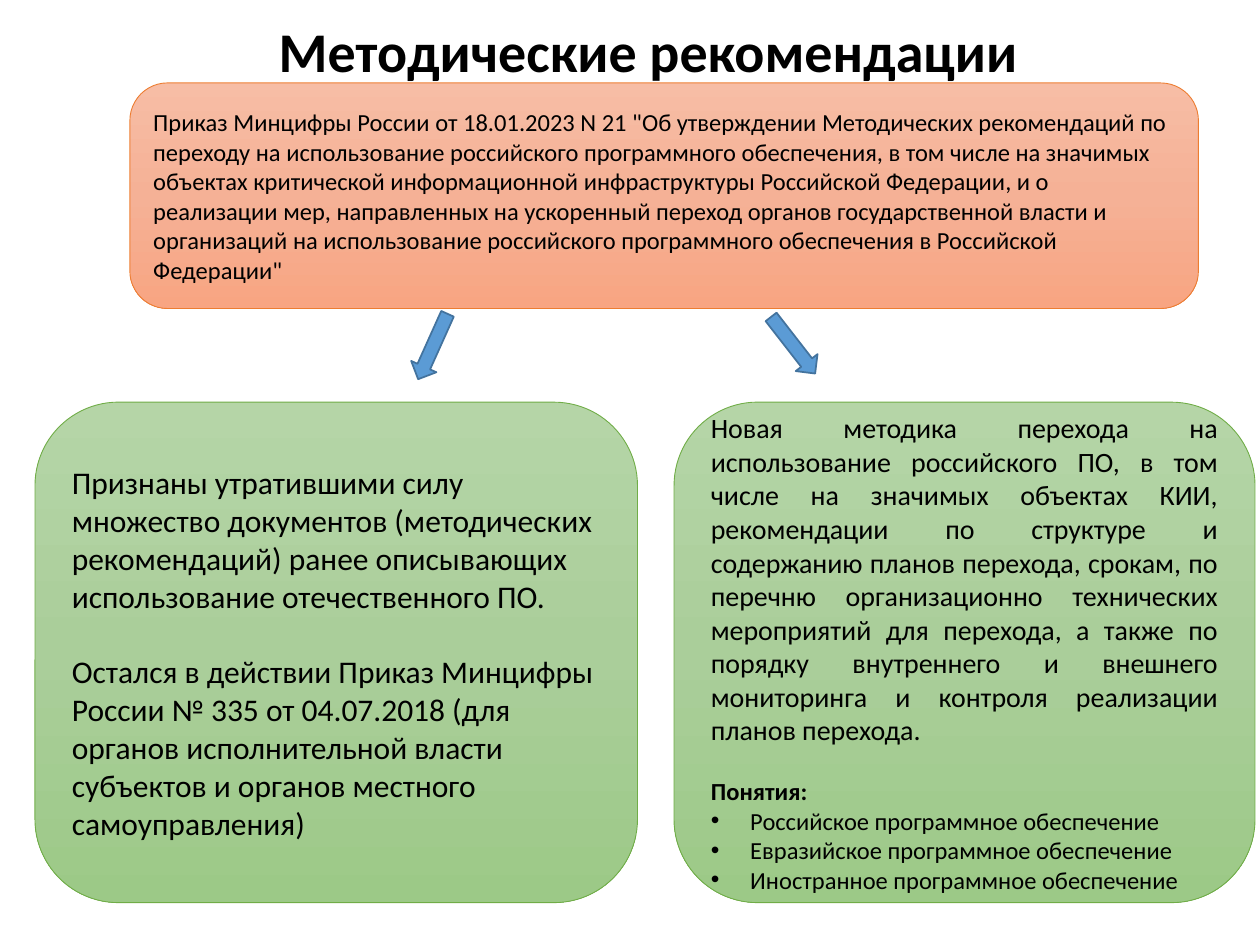
from copy import deepcopy
from dataclasses import dataclass

from lxml import etree
from pptx import Presentation, util as u
from pptx.dml.color import RGBColor
from pptx.enum import shapes, text
from pptx.oxml.ns import qn

COLORS = {
    "text": "000000",
    "arrow": "5B9BD5",
    "arrow_edge": "43739E",
    "orange_edge": "ED7D31",
    "orange_top": "F7BDA5",
    "orange_middle": "F5B196",
    "orange_bottom": "F8A582",
    "green_edge": "70AD47",
    "green_top": "B5D5A7",
    "green_middle": "AACE9A",
    "green_bottom": "9CC987",
}
FONT = "Calibri"
BULLET_INDENT = u.Pt(22.5)


@dataclass
class Line:
    wording: str
    size: float
    bold: bool = False
    bullet: bool = False
    gap: float = 0
    align: text.PP_ALIGN = text.PP_ALIGN.LEFT


@dataclass
class Panel:
    left: float
    top: float
    width: float
    height: float
    tone: str
    lines: list[Line]


@dataclass
class Arrow:
    left: float
    top: float
    angle: float
    width: float = 41
    height: float = 15.8


def rgb(name: str) -> RGBColor:
    return RGBColor.from_string(COLORS[name])


def format_line(paragraph, line: Line) -> None:
    paragraph.text = line.wording
    paragraph.alignment = line.align
    if line.gap:
        paragraph.space_before = u.Pt(line.gap)
    if line.bullet:
        properties = paragraph._p.get_or_add_pPr()
        properties.set("marL", str(BULLET_INDENT))
        properties.set("indent", str(-BULLET_INDENT))
        etree.SubElement(properties, qn("a:buFont"), typeface="Arial")
        etree.SubElement(properties, qn("a:buChar"), char="•")
    for run in paragraph.runs:
        run.font.name = FONT
        run.font.size = u.Pt(line.size)
        run.font.bold = line.bold
        run.font.color.rgb = rgb("text")


def fill_gradient(shape, tone: str) -> None:
    shape.fill.gradient()
    shape.fill.gradient_angle = 270
    stop_list = shape._element.spPr.find(".//" + qn("a:gsLst"))
    stop_list.insert(1, deepcopy(stop_list[0]))
    levels = ("top", 0), ("middle", 0.5), ("bottom", 1)
    for stop, (level, position) in zip(shape.fill.gradient_stops, levels):
        stop.color.rgb = rgb(f"{tone}_{level}")
        stop.position = position


def draw_panel(slide, panel: Panel) -> None:
    box = slide.shapes.add_shape(
        shapes.MSO_SHAPE.ROUNDED_RECTANGLE,
        u.Pt(panel.left), u.Pt(panel.top), u.Pt(panel.width), u.Pt(panel.height))
    box.shadow.inherit = False
    fill_gradient(box, panel.tone)
    box.line.color.rgb = rgb(f"{panel.tone}_edge")
    box.line.width = u.Pt(0.5)
    frame = box.text_frame
    frame.word_wrap = True
    frame.vertical_anchor = text.MSO_ANCHOR.MIDDLE
    frame.text = "\n".join(line.wording for line in panel.lines)
    for paragraph, line in zip(frame.paragraphs, panel.lines):
        format_line(paragraph, line)


def draw_arrow(slide, arrow: Arrow) -> None:
    pointer = slide.shapes.add_shape(
        shapes.MSO_SHAPE.RIGHT_ARROW,
        u.Pt(arrow.left), u.Pt(arrow.top), u.Pt(arrow.width), u.Pt(arrow.height))
    pointer.shadow.inherit = False
    pointer.rotation = arrow.angle
    pointer.fill.solid()
    pointer.fill.fore_color.rgb = rgb("arrow")
    pointer.line.color.rgb = rgb("arrow_edge")
    pointer.line.width = u.Pt(1)


def draw_title(slide, wording: str) -> None:
    title = slide.shapes.title
    title.left, title.top = u.Pt(152), u.Pt(0)
    title.width, title.height = u.Pt(484.5), u.Pt(62)
    frame = title.text_frame
    frame.auto_size = text.MSO_AUTO_SIZE.NONE
    frame.vertical_anchor = text.MSO_ANCHOR.MIDDLE
    heading = frame.paragraphs[0]
    format_line(heading, Line(wording, 32, bold=True))
    heading.line_spacing = 0.9


JUSTIFY = text.PP_ALIGN.JUSTIFY
CONCEPTS = ["Российское", "Евразийское", "Иностранное"]

ORDER = Panel(74.2, 47.4, 610.6, 128.9, "orange", [
    Line("Приказ Минцифры России от 18.01.2023 N 21 \"Об утверждении Методических "
         "рекомендаций по переходу на использование российского программного "
         "обеспечения, в том числе на значимых объектах критической информационной "
         "инфраструктуры Российской Федерации, и о реализации мер, направленных на "
         "ускоренный переход органов государственной власти и организаций на "
         "использование российского программного обеспечения в Российской "
         "Федерации\"", 14),
])
NEW_METHOD = Panel(385.2, 229.8, 332, 286, "green", [
    Line("Новая методика перехода на использование российского ПО, в том числе на "
         "значимых объектах КИИ, рекомендации по структуре и содержанию планов "
         "перехода, срокам, по перечню организационно технических мероприятий для "
         "перехода, а также по порядку внутреннего и внешнего мониторинга и контроля "
         "реализации планов перехода.", 16, align=JUSTIFY),
    Line("Понятия:", 14, bold=True, gap=17, align=JUSTIFY),
    *[Line(f"{origin} программное обеспечение", 14, bullet=True, align=JUSTIFY)
      for origin in CONCEPTS],
])
OLD_DOCUMENTS = Panel(20, 229.8, 344.3, 286, "green", [
    Line("Признаны утратившими силу множество документов (методических "
         "рекомендаций) ранее описывающих использование отечественного ПО.", 18),
    Line("Остался в действии Приказ Минцифры России № 335 от 04.07.2018 (для "
         "органов исполнительной власти субъектов и органов местного "
         "самоуправления)", 18, gap=21.6),
])
ARROWS = [Arrow(226.8, 190.1, 114.2), Arrow(432.7, 189.4, 52.1)]


def main() -> None:
    deck = Presentation()
    deck.slide_width, deck.slide_height = u.Pt(720), u.Pt(540)
    slide = deck.slides.add_slide(deck.slide_layouts[5])
    draw_title(slide, "Методические рекомендации")
    draw_panel(slide, ORDER)
    draw_panel(slide, NEW_METHOD)
    for arrow in ARROWS:
        draw_arrow(slide, arrow)
    draw_panel(slide, OLD_DOCUMENTS)
    deck.save("out.pptx")


if __name__ == "__main__":
    main()
